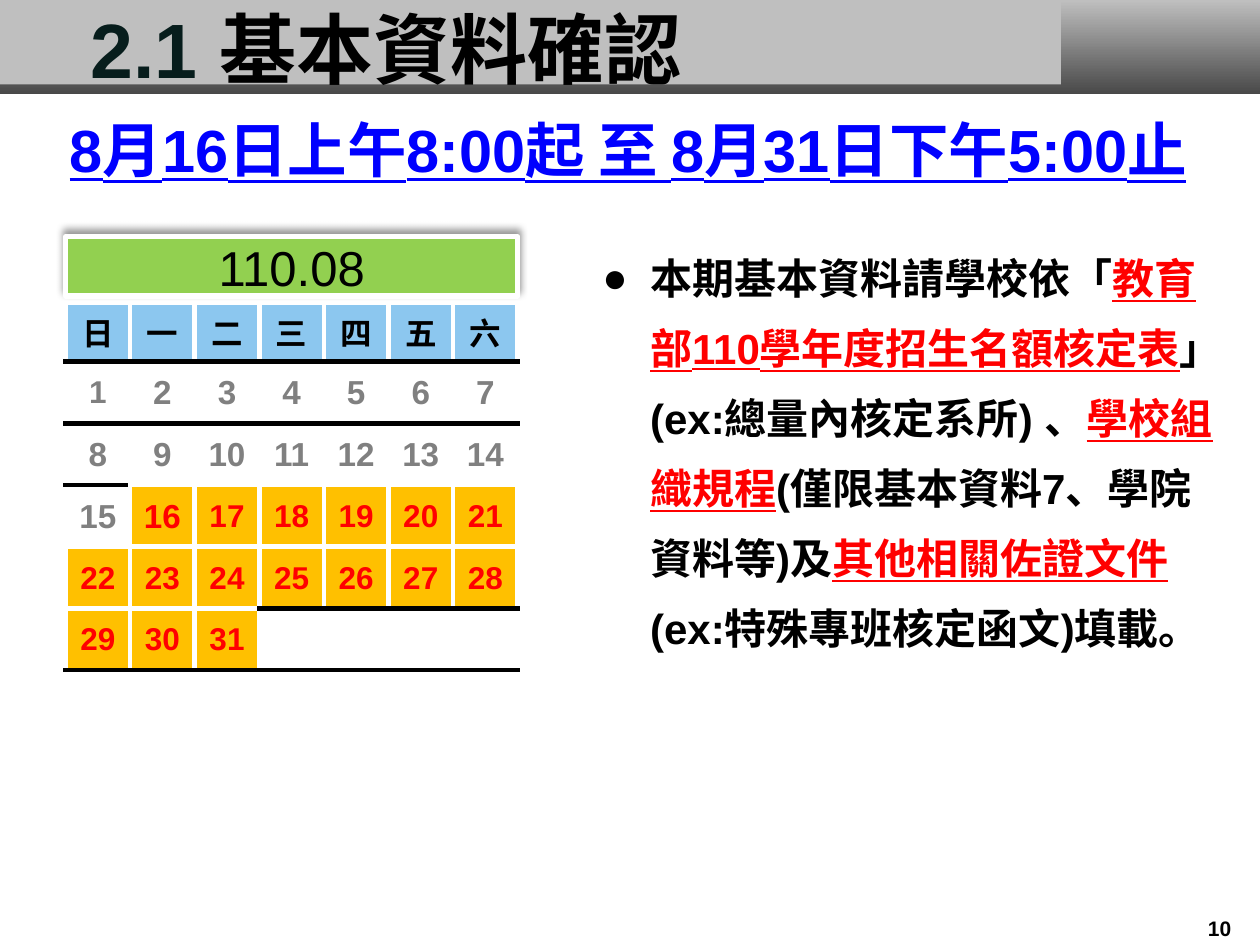
"""Build the slide on basic data confirmation with its August calendar."""
from lxml.etree import SubElement
from pptx import Presentation
from pptx.dml.color import RGBColor
from pptx.enum.shapes import MSO_SHAPE
from pptx.enum.text import MSO_ANCHOR, PP_ALIGN
from pptx.oxml import parse_xml
from pptx.oxml.ns import nsdecls, qn
from pptx.util import Inches, Pt

COLORS = {
    "black": "000000", "white": "FFFFFF", "band": "BFBFBF", "band_dark": "484848",
    "teal": "071D1C", "blue": "0000FF", "red": "FF0000", "grey": "808080",
    "weekday": "8CC7EF", "open": "FFC000", "month": "92D050",
}
CJK = "Noto Sans CJK SC"


def rgb(name):
    return RGBColor.from_string(COLORS[name])


def style(r, size, color, bold=True, underline=False, ea=None):
    r.font.name = "Arial"
    r.font.size = Pt(size)
    r.font.bold = bold
    r.font.underline = underline
    r.font.color.rgb = rgb(color)
    if ea:
        SubElement(r._r.rPr, qn("a:ea")).set("typeface", ea)


prs = Presentation()
prs.slide_width, prs.slide_height = Inches(10), Inches(7.5)
s = prs.slides.add_slide(prs.slide_layouts[1])
title, body = s.shapes.title, s.placeholders[1]

for width, height in ((10, 0.75), (8.42, 0.67)):
    band = s.shapes.add_shape(MSO_SHAPE.RECTANGLE, 0, 0, Inches(width), Inches(height))
    band.shadow.inherit = False
    band.line.fill.background()
    if width == 10:
        band.fill.gradient()
        band.fill.gradient_angle = 270
        for stop, color in zip(band.fill.gradient_stops, ("band", "band_dark")):
            stop.color.rgb = rgb(color)
            stop.position = 0 if color == "band" else 1
    else:
        band.fill.solid()
        band.fill.fore_color.rgb = rgb("band")

for placeholder in (title, body):
    s.shapes._spTree.append(placeholder._element)

title.left, title.top, title.width, title.height = Inches(0.62), Inches(0.04), Inches(7.76), Inches(0.67)
tf = title.text_frame
tf.vertical_anchor = MSO_ANCHOR.MIDDLE
p = tf.paragraphs[0]
p.alignment = PP_ALIGN.LEFT
for text, color in (("2.1 ", "teal"), ("基本資料確認", "black")):
    r = p.add_run()
    r.text = text
    style(r, 44, color, ea=CJK)

labels = (
    ("8月16日上午8:00起 至 8月31日下午5:00止", (0.38, 0.85, 9.21, 0.67), 34, "blue", True),
    ("10", (9.36, 7.22, 0.64, 0.28), 12, "black", False),
)
for text, box, size, color, underline in labels:
    tf = s.shapes.add_textbox(*map(Inches, box)).text_frame
    tf.word_wrap = True
    tf.text = text
    p = tf.paragraphs[0]
    p.alignment = PP_ALIGN.CENTER
    style(p.runs[0], size, color, underline=underline)

body.left, body.top, body.width, body.height = Inches(4.68), Inches(1.8), Inches(5.12), Inches(4.05)
p = body.text_frame.paragraphs[0]
p.line_spacing = Pt(40)
p.space_before = Pt(0)
pPr = p._p.get_or_add_pPr()
pPr.set("marL", str(Inches(0.38)))
pPr.set("indent", str(-Inches(0.38)))
SubElement(pPr, qn("a:buChar")).set("char", "●")
phrases = (
    "本期基本資料請學校依「", "教育部110學年度招生名額核定表", "」(ex:總量內核定系所) 、",
    "學校組織規程", "(僅限基本資料7、學院資料等)及", "其他相關佐證文件", "(ex:特殊專班核定函文)填載。",
)
for i, text in enumerate(phrases):
    r = p.add_run()
    r.text = text
    marked = i % 2 == 1
    style(r, 24, "red" if marked else "black", underline=marked)

frame = s.shapes.add_table(6, 7, Inches(0.52), Inches(2.4), Inches(3.59), Inches(2.92))
table = frame.table
table.first_row = table.horz_banding = False
for column in table.columns:
    column.width = Inches(3.59 / 7)
for i, row in enumerate(table.rows):
    row.height = Inches(0.49 if i else 0.47)

ruled = {(i, j) for i in (0, 1, 5) for j in range(7)} | {(2, 0)} | {(4, j) for j in range(3, 7)}
for i in range(6):
    for j in range(7):
        cell = table.cell(i, j)
        day = (i - 1) * 7 + j + 1
        cell.vertical_anchor = MSO_ANCHOR.MIDDLE
        if i:
            cell.margin_left = cell.margin_right = cell.margin_top = Inches(0.01)
            cell.margin_bottom = 0
        if day <= 31:
            cell.text = str(day) if i else "日一二三四五六"[j]
            p = cell.text_frame.paragraphs[0]
            p.alignment = PP_ALIGN.CENTER
            size = 19 if 2 <= day <= 16 else 18
            color = "black" if i == 0 else "grey" if day < 16 else "red"
            style(p.runs[0], size, color, ea=CJK)
        if i == 0 or 16 <= day <= 31:
            cell.fill.solid()
            cell.fill.fore_color.rgb = rgb("open" if i else "weekday")
        else:
            cell.fill.background()
        edges = {
            "lnL": "white", "lnR": "white",
            "lnT": "black" if (i - 1, j) in ruled else "white",
            "lnB": "black" if (i, j) in ruled else "white",
        }
        for k, (edge, color) in enumerate(edges.items()):
            cell._tc.get_or_add_tcPr().insert(k, parse_xml(
                f'<a:{edge} {nsdecls("a")} w="{Pt(3)}"><a:solidFill>'
                f'<a:srgbClr val="{COLORS[color]}"/></a:solidFill></a:{edge}>'))

month = s.shapes.add_shape(MSO_SHAPE.RECTANGLE, Inches(0.52), Inches(1.88), Inches(3.59), Inches(0.47))
month.fill.solid()
month.fill.fore_color.rgb = rgb("month")
month.line.color.rgb = rgb("white")
month.line.width = Pt(3)
month.shadow.inherit = False
shadow = SubElement(month._element.spPr.find(qn("a:effectLst")), qn("a:outerShdw"),
                    blurRad=str(Pt(4)), dist=str(Pt(3)), dir="16200000", rotWithShape="0")
tint = SubElement(shadow, qn("a:srgbClr"), val=COLORS["black"])
SubElement(tint, qn("a:alpha"), val="40000")
tf = month.text_frame
tf.vertical_anchor = MSO_ANCHOR.MIDDLE
tf.text = "110.08"
p = tf.paragraphs[0]
p.alignment = PP_ALIGN.CENTER
style(p.runs[0], 28, "black", bold=False)

prs.save("out.pptx")
